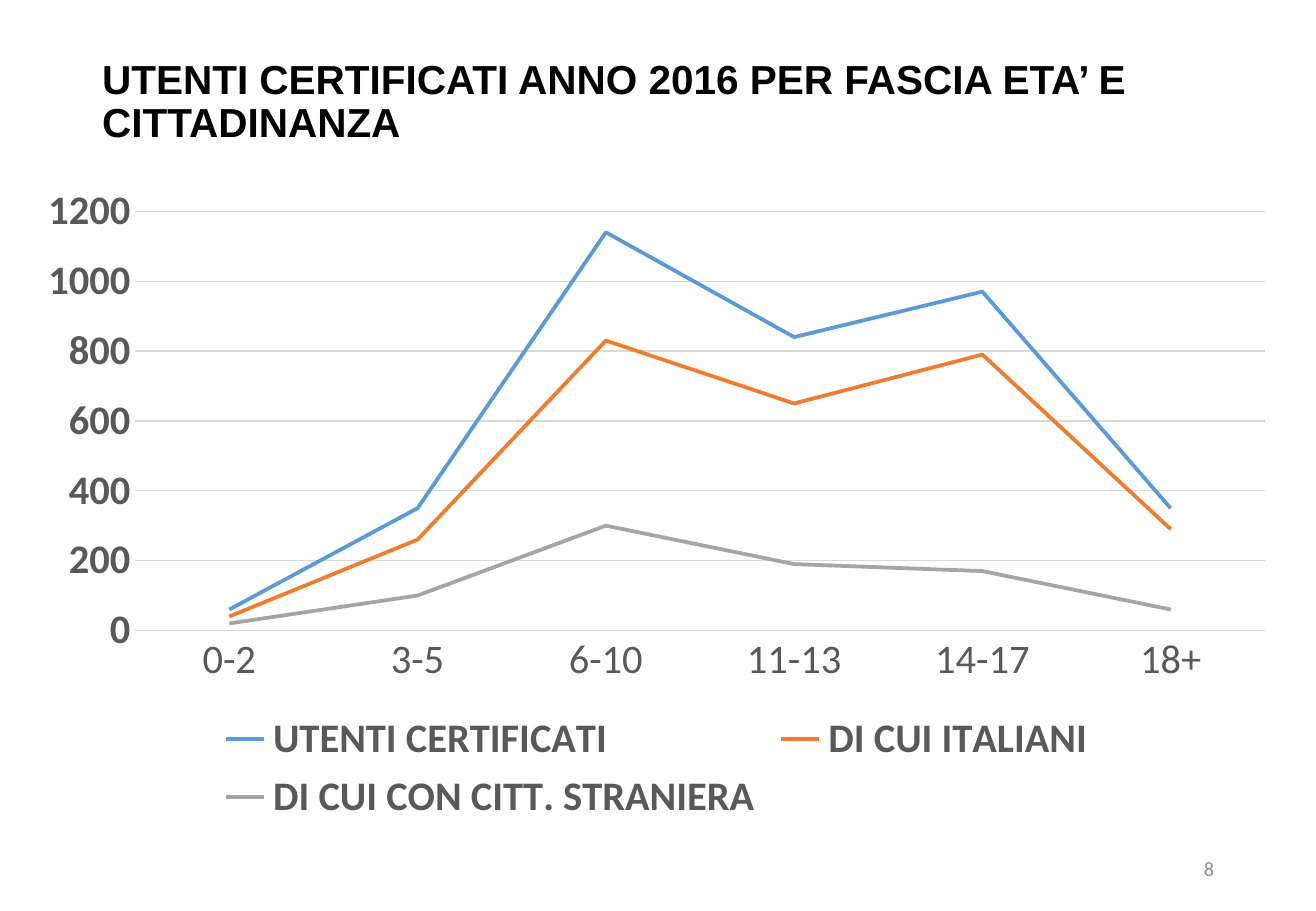
from dataclasses import dataclass

from pptx import Presentation
from pptx.chart.data import CategoryChartData
from pptx.dml.color import RGBColor
from pptx.enum.chart import XL_CHART_TYPE, XL_LEGEND_POSITION, XL_TICK_MARK
from pptx.enum.text import MSO_ANCHOR, MSO_AUTO_SIZE, PP_ALIGN
from pptx.slide import Slide
from pptx.text.text import Font, TextFrame
from pptx.util import Cm, Pt

COLORS = {
    "title": "000000",
    "label": "595959",
    "grid": "D9D9D9",
    "number": "8C8C8C",
    "all": "5B9BD5",
    "italian": "ED7D31",
    "foreign": "A5A5A5",
}
AGE_BANDS = ["0-2", "3-5", "6-10", "11-13", "14-17", "18+"]


@dataclass
class UserGroup:
    name: str
    counts: list[int]
    color: str


USER_GROUPS = [
    UserGroup("UTENTI CERTIFICATI", [60, 350, 1140, 840, 970, 350], "all"),
    UserGroup("DI CUI ITALIANI", [40, 260, 830, 650, 790, 290], "italian"),
    UserGroup("DI CUI CON CITT. STRANIERA", [20, 100, 300, 190, 170, 60], "foreign"),
]


def rgb(color: str) -> RGBColor:
    return RGBColor.from_string(COLORS[color])


def style_font(font: Font, color: str, size: float, bold: bool, name: str = "Calibri") -> None:
    for attribute, value in {"name": name, "size": Pt(size), "bold": bold}.items():
        setattr(font, attribute, value)
    font.color.rgb = rgb(color)


def write_text(frame: TextFrame, text: str, align: PP_ALIGN) -> Font:
    frame_format = {
        "text": text,
        "word_wrap": True,
        "auto_size": MSO_AUTO_SIZE.NONE,
        "vertical_anchor": MSO_ANCHOR.MIDDLE,
    }
    for attribute, value in frame_format.items():
        setattr(frame, attribute, value)
    paragraph = frame.paragraphs[0]
    paragraph.alignment = align
    return paragraph.runs[0].font


def add_heading(slide: Slide) -> None:
    heading = slide.shapes.title
    place = {"left": 1.88, "top": 1.02, "width": 23.72, "height": 2.26}
    for attribute, value in place.items():
        setattr(heading, attribute, Cm(value))
    font = write_text(
        heading.text_frame,
        "UTENTI CERTIFICATI ANNO 2016 PER FASCIA ETA’ E CITTADINANZA",
        PP_ALIGN.LEFT,
    )
    style_font(font, "title", 24, True, "Arial")
    heading.text_frame.paragraphs[0].line_spacing = 0.9


def add_age_chart(slide: Slide) -> None:
    data = CategoryChartData()
    data.categories = AGE_BANDS
    for group in USER_GROUPS:
        data.add_series(group.name, group.counts)
    chart = slide.shapes.add_chart(
        XL_CHART_TYPE.LINE, Cm(0.48), Cm(3.63), Cm(26.49), Cm(13.72), data
    ).chart
    chart.has_title = False
    style_font(chart.font, "title", 10, False)

    # Lines, one per user group
    plot = chart.plots[0]
    plot.vary_by_categories = False
    for series, group in zip(plot.series, USER_GROUPS):
        series.smooth = False
        series.format.line.width = Pt(2.25)
        series.format.line.color.rgb = rgb(group.color)

    # Axes and gridlines
    ages, counts = chart.category_axis, chart.value_axis
    for axis, bold in ((ages, False), (counts, True)):
        axis.major_tick_mark = axis.minor_tick_mark = XL_TICK_MARK.NONE
        style_font(axis.tick_labels.font, "label", 24, bold)
    counts.has_major_gridlines = True
    counts.minimum_scale, counts.maximum_scale, counts.major_unit = 0, 1200, 200
    counts.format.line.fill.background()
    for line in (ages.format.line, counts.major_gridlines.format.line):
        line.width = Pt(0.75)
        line.color.rgb = rgb("grid")

    # Legend
    chart.has_legend = True
    chart.legend.position = XL_LEGEND_POSITION.BOTTOM
    chart.legend.include_in_layout = False
    style_font(chart.legend.font, "label", 24, True)


def add_page_number(slide: Slide) -> None:
    page_number = slide.shapes.add_textbox(Cm(19.43), Cm(17.65), Cm(6.2), Cm(1.02))
    font = write_text(page_number.text_frame, "8", PP_ALIGN.RIGHT)
    style_font(font, "number", 12, False)


def main() -> None:
    presentation = Presentation()
    presentation.slide_width, presentation.slide_height = Cm(27.51), Cm(19.05)
    slide = presentation.slides.add_slide(presentation.slide_layouts[5])
    add_heading(slide)
    add_age_chart(slide)
    add_page_number(slide)
    presentation.save("out.pptx")


if __name__ == "__main__":
    main()
